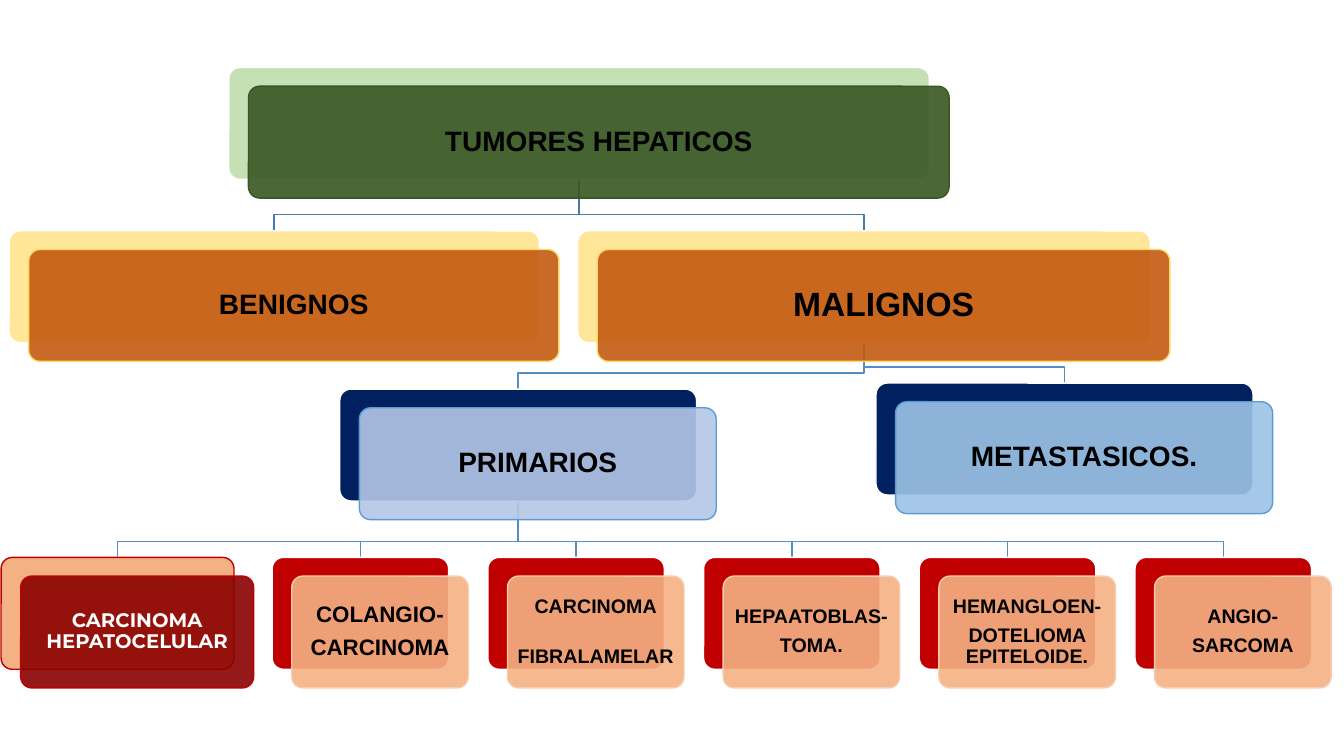
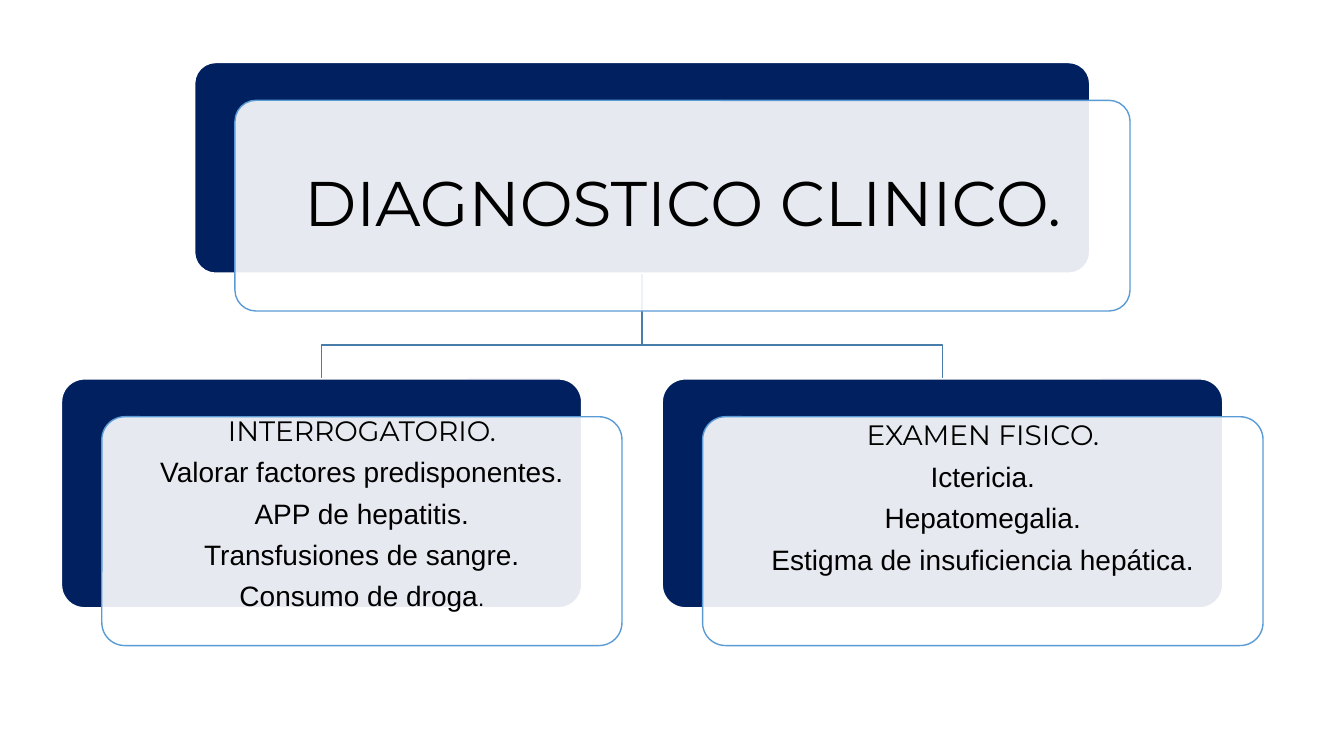
"""Build two slides of layered-card tree diagrams about liver tumours and their diagnosis."""
from dataclasses import dataclass
from lxml import etree
from pptx import Presentation
from pptx import util as u
from pptx.dml.color import RGBColor
from pptx.enum import shapes, text
from pptx.oxml.ns import qn


@dataclass(frozen=True)
class Theme:
    sans: str = "Arial"
    display: str = "Montserrat"
    ink: str = "000000"
    white: str = "FFFFFF"
    root_line: str = "497CAB"
    branch_line: str = "538DC1"
    hero: int = 45
    large: int = 24
    body: int = 20
    leaf: int = 16
    small: int = 14
    corner: float = 0.1
    opacity: int = 90000
    line_width: int = 1
    line_spacing: float = 0.9
    gap_share: float = 0.4


THEME = Theme()
WIDTH, HEIGHT = u.Inches(13.333), u.Inches(7.5)

PALETTES = {
    "root": {"back": "C5E0B4", "edge": "FFFFFF", "front": "385723", "outline": "385723"},
    "group": {"back": "FFE699", "edge": "FFFFFF", "front": "C55A11", "outline": "FFD966"},
    "primary": {"back": "002060", "edge": "FFFFFF", "front": "B4C7E7", "outline": "5B9BD5"},
    "metastatic": {"back": "002060", "edge": "FFFFFF", "front": "9DC3E6", "outline": "5B9BD5"},
    "featured": {"back": "F4B183", "edge": "C00000", "front": "8A0000", "outline": "C00000"},
    "leaf": {"back": "C00000", "edge": "FFFFFF", "front": "F4B183", "outline": "F8CBAD"},
    "clinical": {"back": "002060", "edge": "FFFFFF", "front": "FFFFFF", "outline": "5B9BD5"},
}

LEAVES = [
    (["COLANGIO-", "CARCINOMA"], {"size": THEME.leaf}),
    (["CARCINOMA", "FIBRALAMELAR"], {"before": 14.5}),
    (["HEPAATOBLAS-", "TOMA."], {}),
    (["HEMANGLOEN-", "DOTELIOMA EPITELOIDE."], {}),
    (["ANGIO-", "SARCOMA"], {}),
]
LEAF_LEFT, LEAF_STEP, LEAF_WIDTH, LEAF_TOP = 20.25, 16.05, 13.13, 73.73

TUMOURS = {
    "height": 14.8, "offset": (1.46, 2.47), "drop": 2.13, "bold": True,
    "cards": [
        {"box": (17.03, 8.93, 52.13), "palette": "root", "lines": ["TUMORES HEPATICOS"]},
        {"box": (0.68, 30.53, 39.45), "palette": "group", "parent": 0, "lines": ["BENIGNOS"]},
        {"box": (42.98, 30.53, 42.6), "palette": "group", "parent": 0, "lines": ["MALIGNOS"],
         "size": THEME.large},
        {"box": (25.28, 51.47, 26.55), "palette": "primary", "parent": 2, "lines": ["PRIMARIOS"]},
        {"box": (0.08, LEAF_TOP, 17.33), "palette": "featured", "parent": 3,
         "lines": ["CARCINOMA HEPATOCELULAR"], "size": THEME.small,
         "font": THEME.display, "color": THEME.white, "inset": 0.06},
        *({"box": (LEAF_LEFT + index * LEAF_STEP, LEAF_TOP, LEAF_WIDTH), "palette": "leaf",
           "parent": 3, "lines": lines, "size": THEME.small, "inset": 0.06, **style}
          for index, (lines, style) in enumerate(LEAVES)),
        {"box": (65.18, 50.67, 28.05), "palette": "metastatic", "parent": 2,
         "lines": ["METASTASICOS."]},
    ],
}

DIAGNOSIS = {
    "height": 30.27, "offset": (3, 5), "drop": 4.5, "bold": False,
    "cards": [
        {"box": (14.48, 8.27, 66.6), "height": 27.87, "palette": "clinical",
         "heading": "DIAGNOSTICO CLINICO.", "size": THEME.hero, "inset": 0.19},
        {"box": (4.58, 50.13, 38.7), "palette": "clinical", "parent": 0, "bottom": 0.4,
         "heading": "INTERROGATORIO.", "tail": (".", THEME.leaf),
         "lines": ["Valorar factores predisponentes.", "APP de hepatitis.",
                   "Transfusiones de sangre.", "Consumo de droga"]},
        {"box": (49.28, 50.13, 41.7), "palette": "clinical", "parent": 0, "bottom": 0.72,
         "heading": "EXAMEN FISICO.",
         "lines": ["Ictericia.", "Hepatomegalia.", "Estigma de insuficiencia hepática."]},
    ],
}


def across(percent):
    """Return a share of the slide width."""
    return round(WIDTH * percent / 100)


def down(percent):
    """Return a share of the slide height."""
    return round(HEIGHT * percent / 100)


def outline(shape, color):
    """Give a shape a thin line and no shadow."""
    shape.shadow.inherit = False
    shape.line.color.rgb = RGBColor.from_string(color)
    shape.line.width = u.Pt(THEME.line_width)


def add_branch(slide, parent, child, tree):
    """Draw the elbow line from a parent card to its child."""
    left, top, width = parent["box"]
    start = across(left + width / 2)
    bottom = down(top + parent.get("height", tree["height"]))
    child_left, child_top, child_width = child["box"]
    end = across(child_left + child_width / 2)
    bend = down(child_top - tree["drop"])
    builder = slide.shapes.build_freeform(start, bottom)
    builder.add_line_segments([(start, bend), (end, bend), (end, down(child_top))], close=False)
    branch = builder.convert_to_shape()
    branch.fill.background()
    outline(branch, THEME.branch_line if "parent" in parent else THEME.root_line)


def add_panel(slide, box, fill, line):
    """Add one rounded panel of a card."""
    panel = slide.shapes.add_shape(shapes.MSO_SHAPE.ROUNDED_RECTANGLE, *box)
    panel.adjustments[0] = THEME.corner
    panel.fill.solid()
    panel.fill.fore_color.rgb = RGBColor.from_string(fill)
    outline(panel, line)
    return panel


def write(paragraph, words, *, size=THEME.body, font=THEME.sans, color=THEME.ink, bold=False):
    """Add a formatted run to a paragraph."""
    run = paragraph.add_run()
    run.text = words
    run.font.size = u.Pt(size)
    run.font.name = font
    run.font.bold = bold
    run.font.color.rgb = RGBColor.from_string(color)


def fill_text(panel, card, bold):
    """Write the heading and lines of a card."""
    frame = panel.text_frame
    frame.word_wrap = True
    frame.vertical_anchor = text.MSO_ANCHOR.MIDDLE
    inset = card.get("inset", 0.08)
    frame.margin_left = frame.margin_right = frame.margin_top = u.Inches(inset)
    frame.margin_bottom = u.Inches(card.get("bottom", inset))
    style = {key: card[key] for key in ("size", "font", "color") if key in card}
    rows = [(line, style) for line in card.get("lines", [])]
    if "heading" in card:
        rows.insert(0, (card["heading"], {**style, "font": THEME.display}))
    for index, (words, row_style) in enumerate(rows):
        paragraph = frame.add_paragraph() if index else frame.paragraphs[0]
        paragraph.alignment = text.PP_ALIGN.CENTER
        paragraph.line_spacing = THEME.line_spacing
        paragraph.space_before = u.Pt(card.get("before", 0) if index else 0)
        paragraph.space_after = u.Pt(row_style.get("size", THEME.body) * THEME.gap_share)
        write(paragraph, words, bold=bold, **row_style)
    if "tail" in card:
        words, size = card["tail"]
        write(paragraph, words, size=size, bold=bold)


def add_card(slide, card, tree):
    """Add a back panel and a translucent front panel with text."""
    left, top, width = card["box"]
    size = across(width), down(card.get("height", tree["height"]))
    shift_x, shift_y = tree["offset"]
    palette = PALETTES[card["palette"]]
    add_panel(slide, (across(left), down(top), *size), palette["back"], palette["edge"])
    front = add_panel(slide, (across(left + shift_x), down(top + shift_y), *size),
                      palette["front"], palette["outline"])
    color = front.element.spPr.find(qn("a:solidFill"))[0]
    etree.SubElement(color, qn("a:alpha"), val=str(THEME.opacity))
    fill_text(front, card, tree["bold"])


def add_tree(presentation, tree):
    """Add a slide with the branches behind the cards."""
    slide = presentation.slides.add_slide(presentation.slide_layouts[6])
    cards = tree["cards"]
    for card in cards:
        if "parent" in card:
            add_branch(slide, cards[card["parent"]], card, tree)
    for card in cards:
        add_card(slide, card, tree)


def main():
    """Build and save the presentation."""
    presentation = Presentation()
    presentation.slide_width, presentation.slide_height = WIDTH, HEIGHT
    for tree in (TUMOURS, DIAGNOSIS):
        add_tree(presentation, tree)
    presentation.save("out.pptx")


if __name__ == "__main__":
    main()
